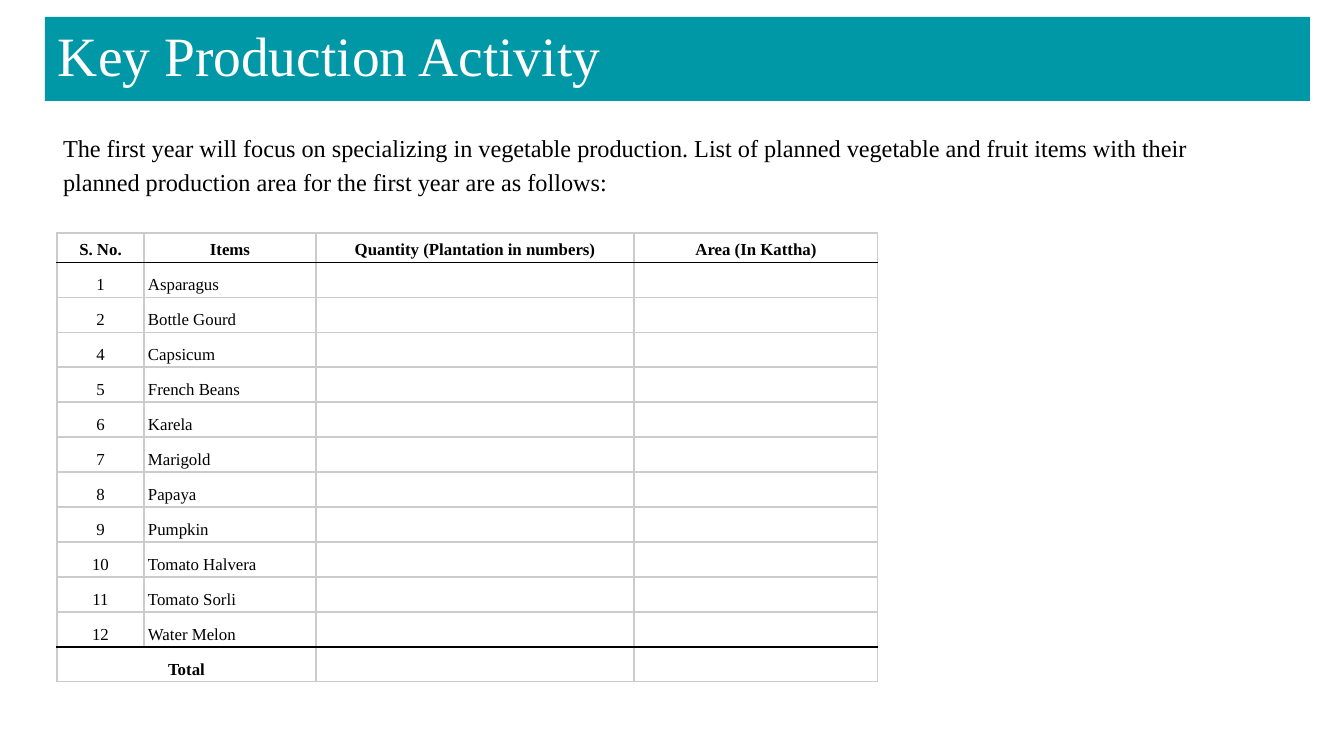
from lxml.etree import SubElement
from pptx import Presentation
from pptx.dml.color import RGBColor
from pptx.enum.text import MSO_ANCHOR as Anchor, MSO_AUTO_SIZE as AutoSize, PP_ALIGN as Align
from pptx.oxml.ns import qn
from pptx.util import Pt

PX = 914400 / 134.4
FONT = "Times New Roman"
TEAL = RGBColor(0x00, 0x97, 0xA7)
WHITE = RGBColor(0xFF, 0xFF, 0xFF)
BLACK = RGBColor(0x00, 0x00, 0x00)
GREY = RGBColor(0xCC, 0xCC, 0xCC)


def px(value):
    return round(value * PX)


def write(frame, text, size, color, bold=False, align=Align.LEFT, spacing=1.15):
    paragraph = frame.paragraphs[0]
    paragraph.text = text
    paragraph.alignment = align
    paragraph.line_spacing = spacing
    font = paragraph.font
    font.name, font.size, font.bold = FONT, Pt(size), bold
    font.color.rgb = color


presentation = Presentation()
presentation.slide_width, presentation.slide_height = px(1344), px(756)
slide = presentation.slides.add_slide(presentation.slide_layouts[5])

# Title band
title = slide.shapes.title
title.left, title.top, title.width, title.height = px(45), px(17), px(1265), px(84)
title.fill.solid()
title.fill.fore_color.rgb = TEAL
frame = title.text_frame
frame.auto_size = AutoSize.NONE
frame.vertical_anchor = Anchor.BOTTOM
frame.margin_left = frame.margin_right = frame.margin_bottom = px(13)
frame.margin_top = px(7)
write(frame, "Key Production Activity", 29.7, WHITE, spacing=1)

# Introduction
intro = slide.shapes.add_textbox(px(50), px(116), px(1180), px(90))
frame = intro.text_frame
frame.word_wrap = True
frame.margin_left = frame.margin_right = frame.margin_top = frame.margin_bottom = px(13)
write(frame, "The first year will focus on specializing in vegetable production. "
      "List of planned vegetable and fruit items with their planned production "
      "area for the first year are as follows:", 13, BLACK)

# Production table
rows = [
    ("S. No.", "Items", "Quantity (Plantation in numbers)", "Area (In Kattha)"),
    ("1", "Asparagus", "", ""),
    ("2", "Bottle Gourd", "", ""),
    ("4", "Capsicum", "", ""),
    ("5", "French Beans", "", ""),
    ("6", "Karela", "", ""),
    ("7", "Marigold", "", ""),
    ("8", "Papaya", "", ""),
    ("9", "Pumpkin", "", ""),
    ("10", "Tomato Halvera", "", ""),
    ("11", "Tomato Sorli", "", ""),
    ("12", "Water Melon", "", ""),
    ("Total", "", "", ""),
]
column_widths = [87, 172, 318, 244]
row_heights = [29] + [35] * (len(rows) - 1)
last = len(rows) - 1

table = slide.shapes.add_table(len(rows), len(column_widths), px(57), px(233),
                               px(sum(column_widths)), px(sum(row_heights))).table
table.first_row = table.horz_banding = False
for column, width in zip(table.columns, column_widths):
    column.width = px(width)
for row, height in zip(table.rows, row_heights):
    row.height = px(height)

for row_index, row in enumerate(rows):
    strong = row_index in (0, last)
    for column_index, text in enumerate(row):
        cell = table.cell(row_index, column_index)
        cell.fill.background()
        cell.vertical_anchor = Anchor.BOTTOM
        cell.margin_left = cell.margin_right = px(4)
        cell.margin_top = cell.margin_bottom = px(3)
        centred = strong or column_index == 0
        write(cell.text_frame, text, 9, BLACK, strong, Align.CENTER if centred else Align.LEFT)

        # Borders: black under the header and above the total, grey elsewhere
        properties = cell._tc.get_or_add_tcPr()
        top = BLACK if row_index in (1, last) else GREY
        bottom = BLACK if row_index in (0, last - 1) else GREY
        edges = [("a:lnL", GREY), ("a:lnR", GREY), ("a:lnT", top), ("a:lnB", bottom)]
        for position, (tag, color) in enumerate(edges):
            line = SubElement(properties, qn(tag), w=str(Pt(0.75)))
            SubElement(SubElement(line, qn("a:solidFill")), qn("a:srgbClr"), val=str(color))
            properties.insert(position, line)

table.cell(last, 0).merge(table.cell(last, 1))

presentation.save("out.pptx")
